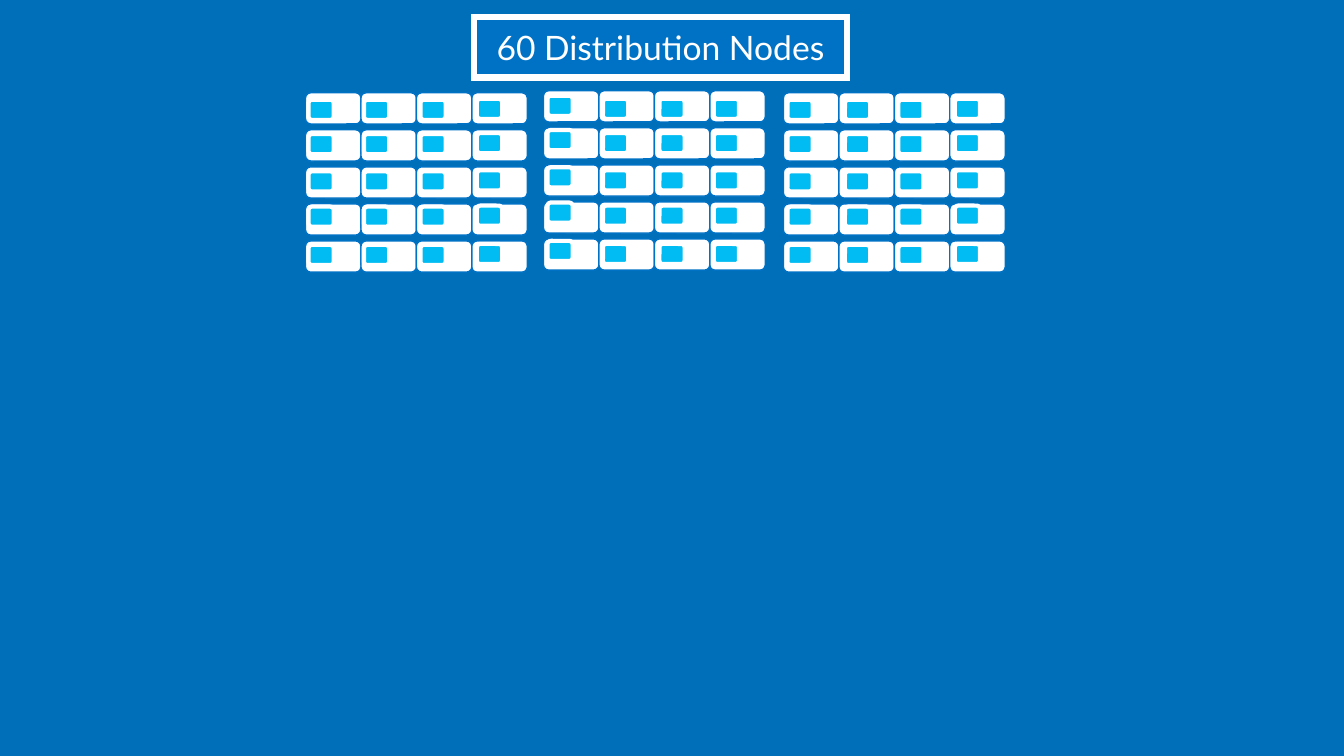
from pptx import Presentation
from pptx import util as u
from pptx.dml.color import RGBColor
from pptx.enum import shapes, text
from pptx.oxml.ns import qn
from lxml import etree

BACKGROUND = RGBColor(0x00, 0x6F, 0xBA)
BLUE = RGBColor(0x00, 0x72, 0xC6)
CYAN = RGBColor(0x00, 0xBC, 0xF2)
WHITE = RGBColor(0xFF, 0xFF, 0xFF)

NODE_TOPS = [0.92 + 0.3675 * row for row in range(5)]
LIGHT_TOPS = (0.99, 1.33, 1.7, 2.05, 2.43)
NODE_PITCH = 0.55
BANKS = (
    (3.03, 0, (3.06, 3.61, 4.17, 4.73), (0, 0, 0, -0.01)),
    (5.39, -0.02, (5.43, 5.98, 6.54, 7.08), (-0.04, -0.01, -0.01, -0.01)),
    (7.77, 0, (7.81, 8.38, 8.91, 9.47), (0, 0, 0, -0.01)),
)


def write_text(shape, content, font="Lato", size=24, color=WHITE):
    frame = shape.text_frame
    frame.auto_size = text.MSO_AUTO_SIZE.NONE
    frame.word_wrap = True
    frame.vertical_anchor = text.MSO_ANCHOR.MIDDLE
    paragraph = frame.paragraphs[0]
    paragraph.alignment = text.PP_ALIGN.CENTER
    run = paragraph.add_run()
    run.text = content
    run.font.name = font
    run.font.size = u.Pt(size)
    run.font.color.rgb = color


class NodeSlide:
    def __init__(self, presentation):
        self.slide = presentation.slides.add_slide(presentation.slide_layouts[5])
        fill = self.slide.background.fill
        fill.solid()
        fill.fore_color.rgb = BACKGROUND

    def paint(self, shape, fill, line, weight):
        shape.fill.solid()
        shape.fill.fore_color.rgb = fill
        shape.line.color.rgb = line
        shape.line.width = u.Pt(weight)

    def title(self, content, left, top, width, height):
        shape = self.slide.shapes.title
        shape.left, shape.top = u.Inches(left), u.Inches(top)
        shape.width, shape.height = u.Inches(width), u.Inches(height)
        self.paint(shape, BLUE, WHITE, 4.5)
        outline = shape.line._get_or_add_ln()
        etree.SubElement(outline, qn("a:miter"), lim="800000")
        write_text(shape, content)

    def rounded(self, left, top, width, height, fill, line, weight):
        shape = self.slide.shapes.add_shape(
            shapes.MSO_SHAPE.ROUNDED_RECTANGLE,
            u.Inches(left), u.Inches(top), u.Inches(width), u.Inches(height))
        shape.shadow.inherit = False
        self.paint(shape, fill, line, weight)

    def node(self, left, top):
        self.rounded(left, top, 0.55, 0.31, WHITE, BLUE, 1)

    def light(self, left, top):
        self.rounded(left, top, 0.25, 0.2, CYAN, WHITE, 3)


def main():
    presentation = Presentation()
    presentation.slide_width = u.Inches(13.33)
    presentation.slide_height = u.Inches(7.5)
    page = NodeSlide(presentation)
    page.title("60 Distribution Nodes", 4.7, 0.17, 3.7, 0.6)
    for bank_left, bank_shift, _, _ in BANKS:
        for column in range(4):
            for top in NODE_TOPS:
                page.node(bank_left + column * NODE_PITCH, top + bank_shift)
    for _, _, light_lefts, light_shifts in BANKS:
        for left, shift in zip(light_lefts, light_shifts):
            for top in LIGHT_TOPS:
                page.light(left, top + shift)
    presentation.save("out.pptx")


if __name__ == "__main__":
    main()
